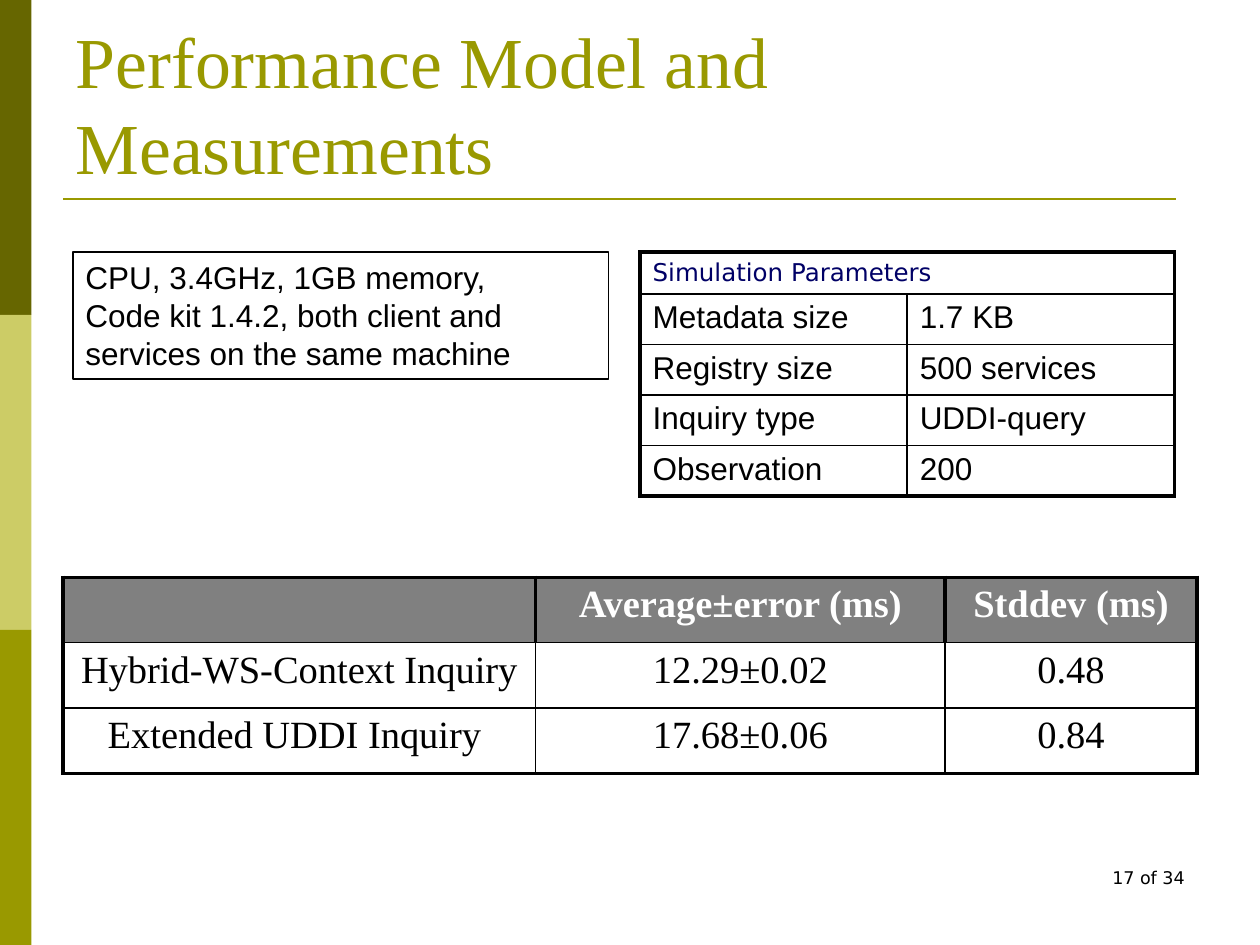
from lxml import etree
from pptx import Presentation
from pptx.dml.color import RGBColor
from pptx.enum.shapes import MSO_CONNECTOR, MSO_SHAPE
from pptx.enum.text import MSO_ANCHOR, MSO_AUTO_SIZE, PP_ALIGN
from pptx.oxml.ns import qn
from pptx.util import Inches, Pt

LEFT, MID, RIGHT = PP_ALIGN.LEFT, PP_ALIGN.CENTER, PP_ALIGN.RIGHT
TOP, BOTTOM = MSO_ANCHOR.TOP, MSO_ANCHOR.BOTTOM
GROW, FIXED = MSO_AUTO_SIZE.SHAPE_TO_FIT_TEXT, MSO_AUTO_SIZE.NONE
RECT, LINE = MSO_SHAPE.RECTANGLE, MSO_CONNECTOR.STRAIGHT

BLACK = RGBColor(0x00, 0x00, 0x00)
WHITE = RGBColor(0xFF, 0xFF, 0xFF)
GRAY = RGBColor(0x80, 0x80, 0x80)
NAVY = RGBColor(0x00, 0x00, 0x66)
OLIVE = RGBColor(0x99, 0x99, 0x00)
DARK = RGBColor(0x66, 0x66, 0x00)
PALE = RGBColor(0xCC, 0xCC, 0x66)

SERIF, SANS, PLAIN = "Times New Roman", "Arial", "DejaVu Sans"

TITLE = "Performance Model and Measurements"
PAGE = "17 of 34"
SETUP = [
    "CPU, 3.4GHz, 1GB memory,",
    "Code kit 1.4.2, both client and services on the same machine",
]
PARAMS = {
    "box": (5.08, 2, 4.25, 1.93),
    "cols": [2.12, 2.12],
    "high": [0.33] + [0.4] * 4,
    "rows": [
        ["Simulation Parameters"],
        ["Metadata size", "1.7 KB"],
        ["Registry size", "500 services"],
        ["Inquiry type", "UDDI-query"],
        ["Observation", "200"],
    ],
    "head": (PLAIN, 14, NAVY, False),
    "body": (SANS, 18, BLACK, False),
    "align": LEFT,
    "shade": None,
    "lines": {"edge": 2.25, "head": 1, "side": 1, "row": 1},
}
RESULTS = {
    "box": (0.5, 4.58, 9, 1.57),
    "cols": [3.75, 3.25, 2],
    "high": [0.52] * 3,
    "rows": [
        ["", "Average±error (ms)", "Stddev (ms)"],
        ["Hybrid-WS-Context Inquiry", "12.29±0.02", "0.48"],
        ["Extended UDDI Inquiry ", "17.68±0.06", "0.84"],
    ],
    "head": (SERIF, 22, WHITE, True),
    "body": (SERIF, 22, BLACK, False),
    "align": MID,
    "shade": GRAY,
    "lines": {"edge": 2, "head": 2, "side": 0.75, "row": 1},
}


def place(box):
    return [Inches(n) for n in box]


def write(frame, lines, style, align):
    face, size, color, bold = style
    for i, line in enumerate(lines):
        para = frame.add_paragraph() if i else frame.paragraphs[0]
        para.alignment = align
        run = para.add_run()
        run.text = line
        font = run.font
        font.name, font.size, font.bold = face, Pt(size), bold
        font.color.rgb = color


def border(cell, sides):
    props = cell._tc.get_or_add_tcPr()
    for tag, width in zip(("a:lnL", "a:lnR", "a:lnT", "a:lnB"), sides):
        edge = etree.SubElement(props, qn(tag), w=str(Pt(width)))
        fill = etree.SubElement(edge, qn("a:solidFill"))
        etree.SubElement(fill, qn("a:srgbClr"), val=str(BLACK))


def grid(slide, data):
    rows, cols, lines = data["rows"], data["cols"], data["lines"]
    shape = slide.shapes.add_table(len(rows), len(cols), *place(data["box"]))
    table = shape.table
    table.first_row = table.horz_banding = False
    for col, wide in zip(table.columns, cols):
        col.width = Inches(wide)
    for row, high in zip(table.rows, data["high"]):
        row.height = Inches(high)
    for r, texts in enumerate(rows):
        if len(texts) < len(cols):
            table.cell(r, 0).merge(table.cell(r, len(cols) - 1))
        side = lines["side"] if r else lines["head"]
        above = lines["row"] if r else lines["edge"]
        below = lines["row"] if r < len(rows) - 1 else lines["edge"]
        for c, text in enumerate(texts):
            cell = table.cell(r, c)
            near = side if c else lines["edge"]
            far = side if c < len(texts) - 1 else lines["edge"]
            border(cell, (near, far, above, below))
            if data["shade"] and r == 0:
                cell.fill.solid()
                cell.fill.fore_color.rgb = data["shade"]
            else:
                cell.fill.background()
            if text:
                style = data["body"] if r else data["head"]
                write(cell.text_frame, [text], style, data["align"])


def main():
    deck = Presentation()
    deck.slide_width, deck.slide_height = Inches(10), Inches(7.5)
    slide = deck.slides.add_slide(deck.slide_layouts[5])
    shapes = slide.shapes

    for i, color in enumerate((DARK, PALE, OLIVE)):
        bar = shapes.add_shape(RECT, *place((0, 2.5 * i, 0.25, 2.5)))
        bar.shadow.inherit = False
        bar.fill.solid()
        bar.fill.fore_color.rgb = color
        bar.line.fill.background()

    rule = shapes.add_connector(LINE, *place((0.5, 1.58, 9.33, 1.58)))
    rule.line.color.rgb, rule.line.width = OLIVE, Pt(1.5)
    etree.SubElement(rule._element.spPr, qn("a:effectLst"))

    title = shapes.title
    title.left, title.top, title.width, title.height = place((0.5, 0.3, 9, 1.25))
    frame = title.text_frame
    frame.word_wrap, frame.auto_size = True, FIXED
    frame.vertical_anchor = BOTTOM
    write(frame, [TITLE], (SERIF, 41, OLIVE, False), LEFT)

    page = shapes.add_textbox(*place((7.17, 6.83, 2.33, 0.5)))
    page.text_frame.word_wrap = True
    write(page.text_frame, [PAGE], (PLAIN, 10, BLACK, False), RIGHT)

    grid(slide, RESULTS)

    setup = shapes.add_shape(RECT, *place((0.58, 2, 4.25, 1.01)))
    setup.shadow.inherit = False
    setup.fill.background()
    setup.line.color.rgb, setup.line.width = BLACK, Pt(1)
    frame = setup.text_frame
    frame.word_wrap, frame.auto_size = True, GROW
    frame.vertical_anchor = TOP
    write(frame, SETUP, (SANS, 18, BLACK, False), LEFT)

    grid(slide, PARAMS)
    deck.save("out.pptx")


if __name__ == "__main__":
    main()
